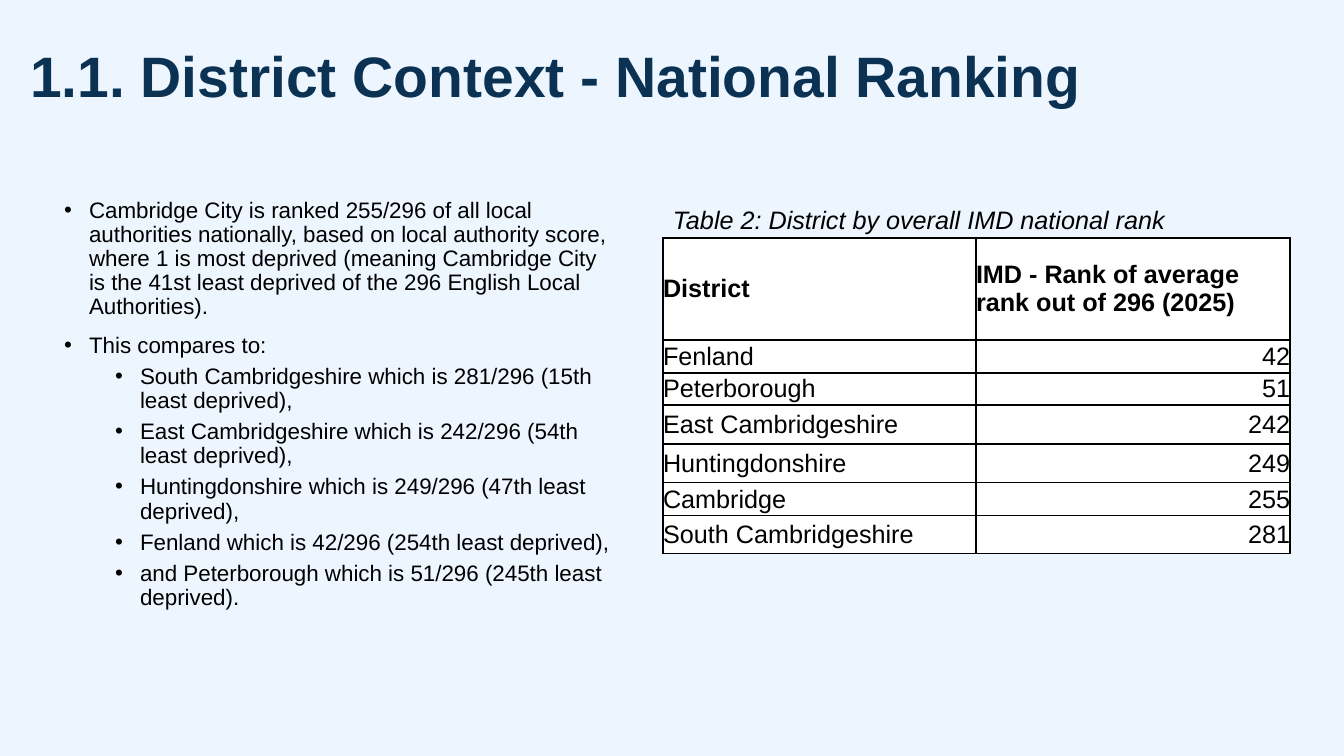
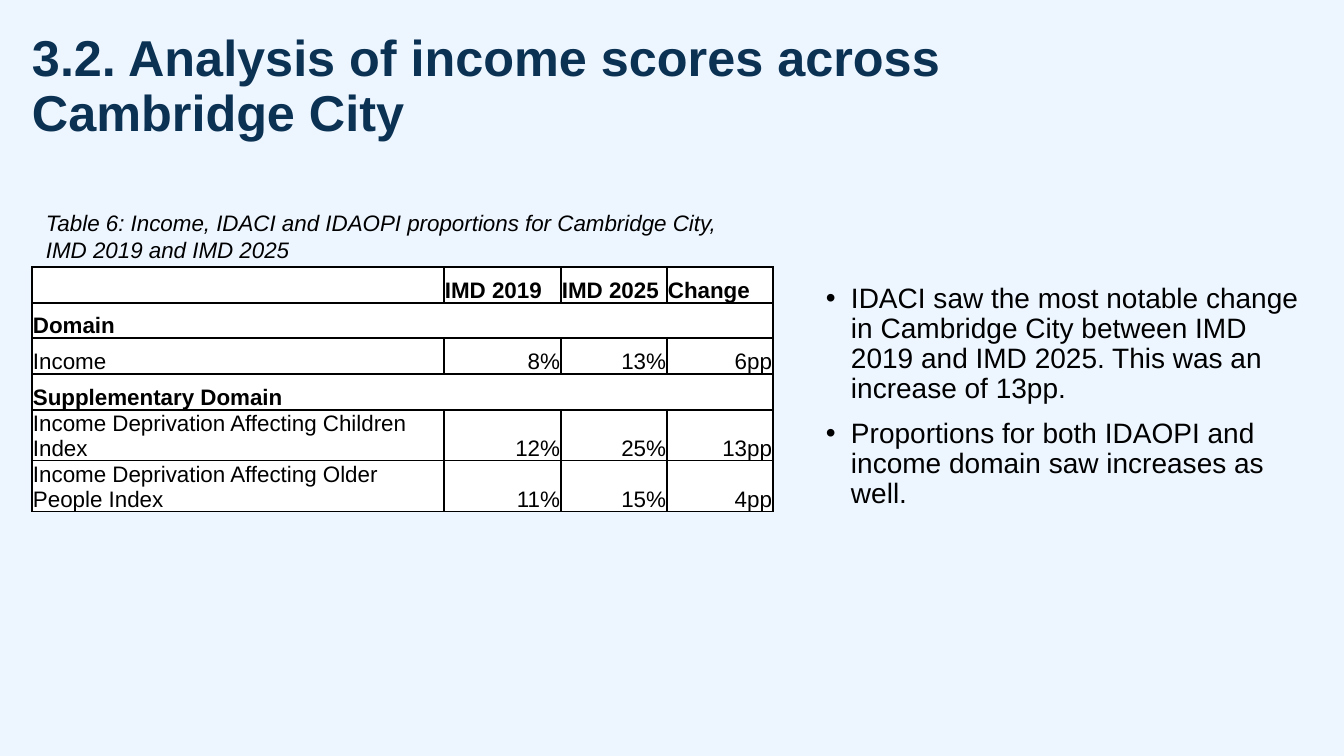
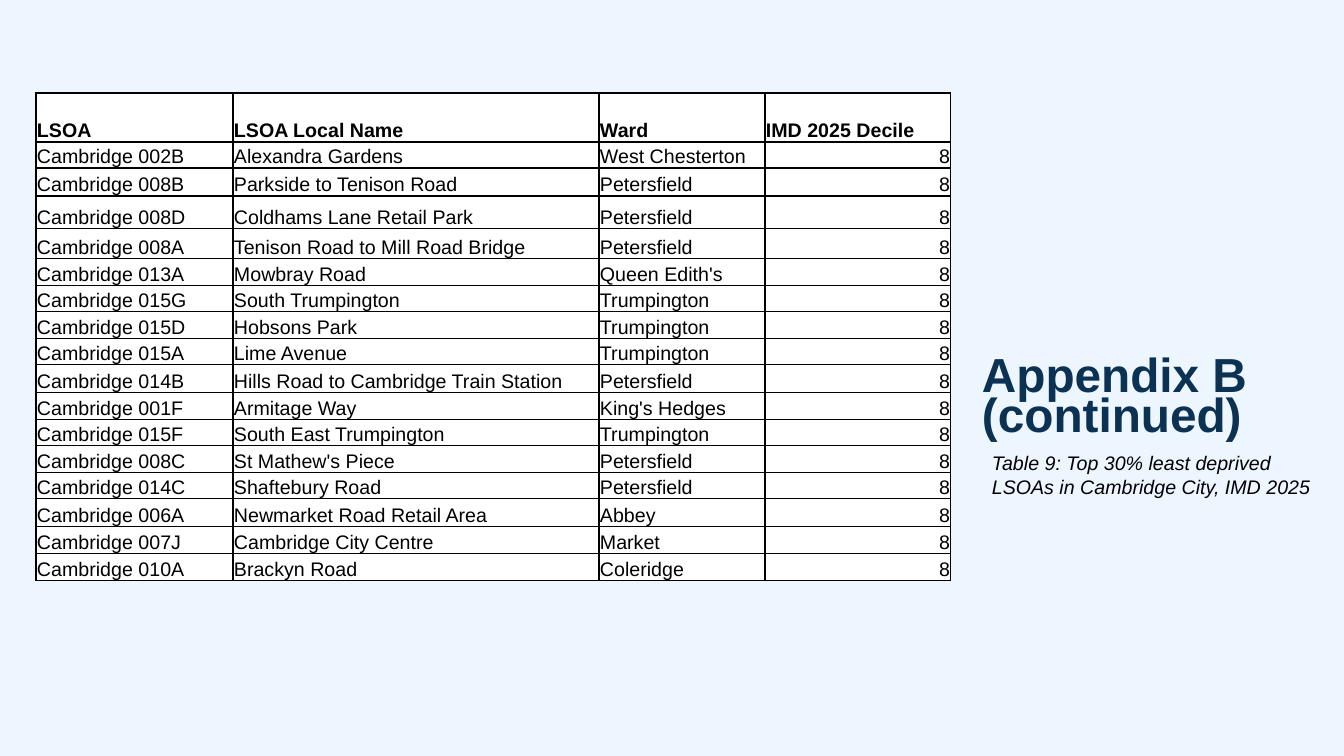
import pptx
import pptx.util
import pptx.dml.color
import pptx.enum.text
import pptx.oxml
import pptx.oxml.ns
from dataclasses import dataclass

ANCHOR = pptx.enum.text.MSO_ANCHOR
ALIGN = pptx.enum.text.PP_ALIGN
FIT = pptx.enum.text.MSO_AUTO_SIZE


@dataclass(frozen=True)
class Theme:
    font: str = "Arial"
    background: str = "EDF6FF"
    title: str = "0B3153"
    text: str = "000000"
    cell: str = "FFFFFF"
    border: str = "000000"
    border_width: float = 1
    line_spacing: float = 0.9
    title_after: float = 6
    level_before: tuple = (10, 5)
    level_indent: tuple = (25, 76)
    hanging: int = 25


THEME = Theme()
SLIDE_SIZE = (1344, 756)
EMU_PER_PX = 12192000 / SLIDE_SIZE[0]

SLIDES = [
    {
        "title": {"text": "1.1. District Context - National Ranking",
                  "box": (30, 48, 1135, 88), "size": 40.7},
        "bullets": {
            "box": (64, 199, 546, 483), "size": 16,
            "items": [
                (0, "Cambridge City is ranked 255/296 of all local authorities nationally, "
                    "based on local authority score, where 1 is most deprived (meaning "
                    "Cambridge City is the 41st least deprived of the 296 English Local "
                    "Authorities)."),
                (0, "This compares to:"),
                (1, "South Cambridgeshire which is 281/296 (15th least deprived),"),
                (1, "East Cambridgeshire which is 242/296 (54th least deprived),"),
                (1, "Huntingdonshire which is 249/296 (47th least deprived),"),
                (1, "Fenland which is 42/296 (254th least deprived),"),
                (1, "and Peterborough which is 51/296 (245th least deprived)."),
            ],
        },
        "caption": {"text": "Table 2: District by overall IMD national rank",
                    "box": (663, 199, 627, 40), "size": 18},
        "table": {
            "origin": (663, 238), "size": 18, "anchor": ANCHOR.MIDDLE, "inset": 0,
            "widths": [313, 314],
            "heights": [102, 33, 32, 39, 39, 33, 38],
            "rows": [
                ("District", "IMD - Rank of average rank out of 296 (2025)"),
                ("Fenland", "42"),
                ("Peterborough", "51"),
                ("East Cambridgeshire", "242"),
                ("Huntingdonshire", "249"),
                ("Cambridge", "255"),
                ("South Cambridgeshire", "281"),
            ],
        },
    },
    {
        "title": {"text": "3.2. Analysis of income scores across Cambridge City",
                  "box": (32, 33, 1024, 134), "size": 36},
        "bullets": {
            "box": (826, 284, 486, 256), "size": 20,
            "items": [
                (0, "IDACI saw the most notable change in Cambridge City between IMD 2019 "
                    "and IMD 2025. This was an increase of 13pp."),
                (0, "Proportions for both IDAOPI and income domain saw increases as well."),
            ],
        },
        "caption": {"text": "Table 6: Income, IDACI and IDAOPI proportions for Cambridge City, "
                            "IMD 2019 and IMD 2025",
                    "box": (36, 204, 737, 64), "size": 16},
        "table": {
            "origin": (32, 267), "size": 16, "anchor": ANCHOR.BOTTOM, "inset": 1,
            "widths": [412, 117, 106, 106],
            "heights": [36, 35, 36, 36, 50, 51],
            "rows": [
                ("", "IMD 2019", "IMD 2025", "Change"),
                ("Domain", "", "", ""),
                ("Income", "8%", "13%", "6pp"),
                ("Supplementary Domain", "", "", ""),
                ("Income Deprivation Affecting Children Index", "12%", "25%", "13pp"),
                ("Income Deprivation Affecting Older People Index", "11%", "15%", "4pp"),
            ],
        },
    },
    {
        "title": {"text": "Appendix B (continued)",
                  "box": (982, 360, 352, 87), "size": 34.1, "line_spacing": 0.7},
        "caption": {"text": "Table 9: Top 30% least deprived LSOAs in Cambridge City, IMD 2025",
                    "box": (982, 446, 352, 58), "size": 14},
        "table": {
            "origin": (36, 93), "size": 14, "anchor": ANCHOR.BOTTOM, "inset": 1,
            "widths": [197, 366, 166, 186],
            "heights": [49, 26, 28, 33, 30, 27, 26, 27, 26, 28, 27, 26, 27, 26, 28, 27, 27],
            "rows": [
                ("LSOA", "LSOA Local Name", "Ward", "IMD 2025 Decile"),
                ("Cambridge 002B", "Alexandra Gardens", "West Chesterton", "8"),
                ("Cambridge 008B", "Parkside to Tenison Road", "Petersfield", "8"),
                ("Cambridge 008D", "Coldhams Lane Retail Park", "Petersfield", "8"),
                ("Cambridge 008A", "Tenison Road to Mill Road Bridge", "Petersfield", "8"),
                ("Cambridge 013A", "Mowbray Road", "Queen Edith's", "8"),
                ("Cambridge 015G", "South Trumpington", "Trumpington", "8"),
                ("Cambridge 015D", "Hobsons Park", "Trumpington", "8"),
                ("Cambridge 015A", "Lime Avenue", "Trumpington", "8"),
                ("Cambridge 014B", "Hills Road to Cambridge Train Station", "Petersfield", "8"),
                ("Cambridge 001F", "Armitage Way", "King's Hedges", "8"),
                ("Cambridge 015F", "South East Trumpington", "Trumpington", "8"),
                ("Cambridge 008C", "St Mathew's Piece", "Petersfield", "8"),
                ("Cambridge 014C", "Shaftebury Road", "Petersfield", "8"),
                ("Cambridge 006A", "Newmarket Road Retail Area", "Abbey", "8"),
                ("Cambridge 007J", "Cambridge City Centre", "Market", "8"),
                ("Cambridge 010A", "Brackyn Road", "Coleridge", "8"),
            ],
        },
    },
]


def px(length):
    return pptx.util.Emu(round(length * EMU_PER_PX))


def rgb(colour):
    return pptx.dml.color.RGBColor.from_string(colour)


def apply(target, **values):
    for attribute, value in values.items():
        setattr(target, attribute, value)


def write(paragraph, text, size, colour=THEME.text, **style):
    run = paragraph.add_run()
    run.text = text
    apply(run.font, name=THEME.font, size=pptx.util.Pt(size), **style)
    run.font.color.rgb = rgb(colour)


def place(holder, box):
    apply(holder, **dict(zip(("left", "top", "width", "height"), map(px, box))))
    apply(holder.text_frame, margin_left=0, margin_right=0, margin_top=0, margin_bottom=0,
          word_wrap=True, auto_size=FIT.NONE, vertical_anchor=ANCHOR.TOP)
    return holder.text_frame


def fill_title(slide, text, box, size, line_spacing=THEME.line_spacing):
    heading = place(slide.shapes.title, box).paragraphs[0]
    apply(heading, alignment=ALIGN.LEFT, line_spacing=line_spacing,
          space_after=pptx.util.Pt(THEME.title_after))
    write(heading, text, size, THEME.title, bold=True)


def fill_bullets(slide, box, size, items):
    frame = place(slide.placeholders[1], box)
    for index, (level, text) in enumerate(items):
        point = frame.add_paragraph() if index else frame.paragraphs[0]
        properties = point._p.get_or_add_pPr()
        properties.set("marL", str(px(THEME.level_indent[level])))
        properties.set("indent", str(-px(THEME.hanging)))
        for tag, key, value in (("buFont", "typeface", THEME.font), ("buChar", "char", "•")):
            properties.append(pptx.oxml.parse_xml(
                f'<a:{tag} {pptx.oxml.ns.nsdecls("a")} {key}="{value}"/>'))
        before = THEME.level_before[level] if index else 0
        apply(point, level=level, line_spacing=THEME.line_spacing,
              space_before=pptx.util.Pt(before))
        write(point, text, size)


def add_caption(slide, text, box, size):
    frame = slide.shapes.add_textbox(*map(px, box)).text_frame
    apply(frame, word_wrap=True, auto_size=FIT.SHAPE_TO_FIT_TEXT)
    write(frame.paragraphs[0], text, size, italic=True)


def draw_borders(cell, hidden):
    width = pptx.util.Pt(THEME.border_width)
    solid = f'<a:solidFill><a:srgbClr val="{THEME.border}"/></a:solidFill>'
    for side in "LRTB":
        paint = "<a:noFill/>" if side in hidden else solid
        cell._tc.get_or_add_tcPr().append(pptx.oxml.parse_xml(
            f'<a:ln{side} {pptx.oxml.ns.nsdecls("a")} w="{width}">{paint}</a:ln{side}>'))


def add_grid(slide, origin, size, anchor, inset, widths, heights, rows):
    extent = (sum(widths), sum(heights))
    grid = slide.shapes.add_table(len(rows), len(widths), *map(px, origin + extent)).table
    apply(grid, first_row=False, horz_banding=False)
    for column, width in zip(grid.columns, widths):
        column.width = px(width)
    last = len(widths) - 1
    for r, (values, height) in enumerate(zip(rows, heights)):
        grid.rows[r].height = px(height)
        section = not any(values[1:])
        for c, text in enumerate(values):
            cell = grid.cell(r, c)
            apply(cell, vertical_anchor=anchor, margin_left=px(inset), margin_right=px(inset),
                  margin_top=px(inset), margin_bottom=0)
            hidden = ("L" if c > 0 else "") + ("R" if c < last else "")
            draw_borders(cell, hidden if section else "")
            cell.fill.solid()
            cell.fill.fore_color.rgb = rgb(THEME.cell)
            if text:
                entry = cell.text_frame.paragraphs[0]
                entry.alignment = ALIGN.RIGHT if text[0].isdigit() else ALIGN.LEFT
                write(entry, text, size, bold=r == 0 or section)


def main():
    deck = pptx.Presentation()
    deck.slide_width, deck.slide_height = map(px, SLIDE_SIZE)
    backdrop = deck.slide_master.background.fill
    backdrop.solid()
    backdrop.fore_color.rgb = rgb(THEME.background)
    for content in SLIDES:
        layout = deck.slide_layouts[1 if "bullets" in content else 5]
        slide = deck.slides.add_slide(layout)
        fill_title(slide, **content["title"])
        if "bullets" in content:
            fill_bullets(slide, **content["bullets"])
        add_grid(slide, **content["table"])
        add_caption(slide, **content["caption"])
    deck.save("out.pptx")


if __name__ == "__main__":
    main()
